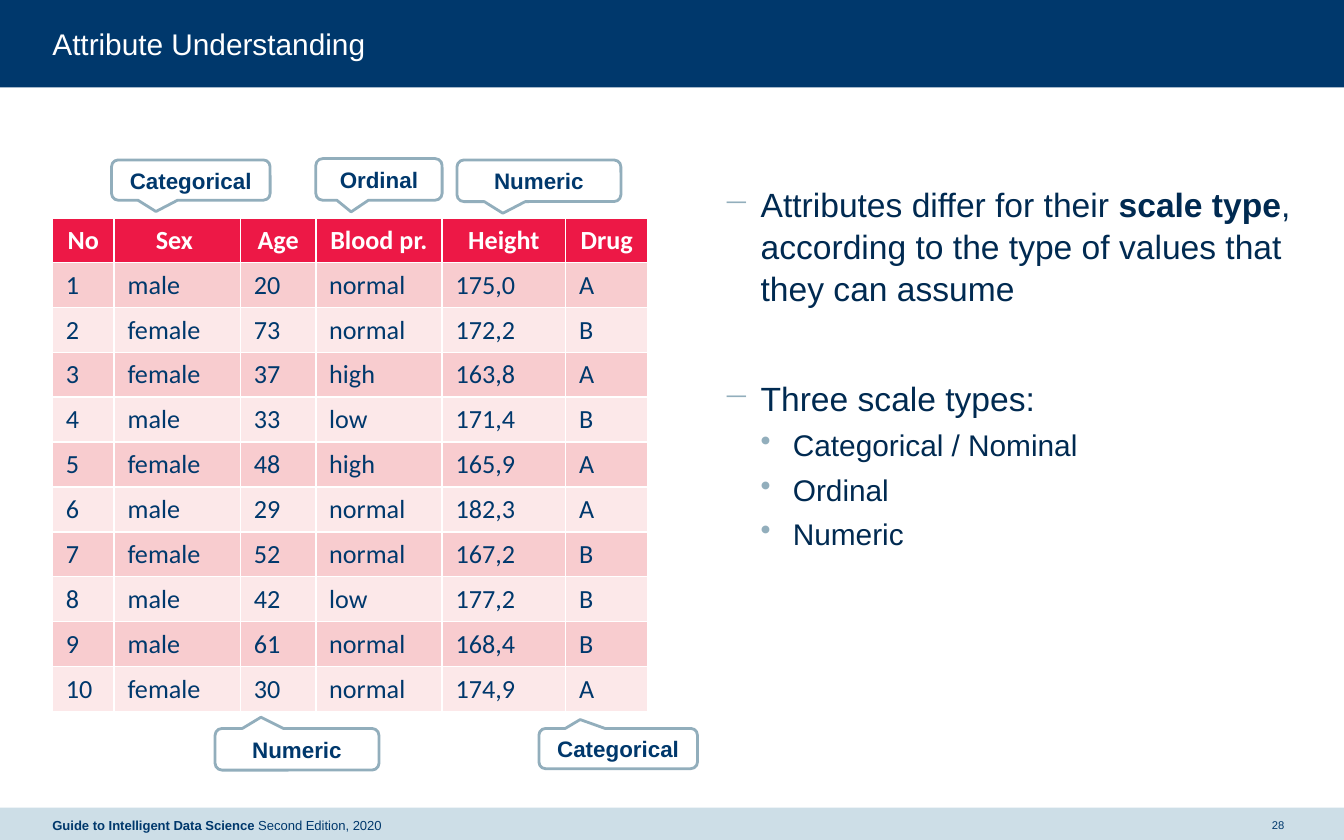
from lxml.etree import SubElement
from pptx import Presentation
from pptx.dml.color import RGBColor
from pptx.enum.shapes import MSO_SHAPE
from pptx.enum.text import MSO_ANCHOR, MSO_AUTO_SIZE, PP_ALIGN
from pptx.oxml.ns import qn
from pptx.util import Inches, Pt

NAVY = RGBColor(0x00, 0x38, 0x6C)
INK = RGBColor(0x00, 0x2A, 0x51)
STEEL = RGBColor(0x92, 0xAE, 0xBC)
PALE_BLUE = RGBColor(0xCD, 0xDE, 0xE7)
RED = RGBColor(0xED, 0x18, 0x46)
PINK = RGBColor(0xF8, 0xCC, 0xCF)
PALE_PINK = RGBColor(0xFC, 0xE8, 0xE9)
WHITE = RGBColor(0xFF, 0xFF, 0xFF)

COLUMN_WIDTHS = [0.46, 0.94, 0.56, 0.94, 0.92, 0.61]
HEADER_HEIGHT = 0.24
ROW_HEIGHT = 0.26
PATIENTS = [
    ("No", "Sex ", "Age", "Blood pr.", "Height", "Drug"),
    ("1", "male", "20", "normal", "175,0", "A"),
    ("2", "female", "73", "normal", "172,2", "B"),
    ("3", "female", "37", "high", "163,8", "A"),
    ("4", "male", "33", "low", "171,4", "B"),
    ("5", "female", "48", "high", "165,9", "A"),
    ("6", "male", "29", "normal", "182,3", "A"),
    ("7", "female", "52", "normal", "167,2", "B"),
    ("8", "male", "42", "low", "177,2", "B"),
    ("9", "male", "61", "normal", "168,4", "B"),
    ("10", "female", "30", "normal", "174,9", "A"),
]
CALLOUTS = [
    ("Numeric", 3.4, 1.19, 1.22, 0.31, -0.22, 0.78),
    ("Categorical", 0.83, 1.19, 1.18, 0.3, -0.22, 0.78),
    ("Ordinal", 2.35, 1.18, 0.94, 0.31, -0.22, 0.78),
    ("Categorical", 4.01, 5.42, 1.18, 0.3, -0.24, -0.72),
    ("Numeric", 1.6, 5.42, 1.22, 0.31, -0.22, -0.77),
]
POINTS = [
    (0, 7.5, [("Attributes differ for their ", False), ("scale type", True),
              (", according to the type of values that they can assume", False)]),
    (0, 36.5, [("Three scale types:", False)]),
    (1, 3.8, [("Categorical / Nominal", False)]),
    (1, 3.8, [("Ordinal", False)]),
    (1, 3.8, [("Numeric", False)]),
]
LEVELS = [("−", 0.29, -0.28, 18), ("•", 0.53, -0.24, 16)]


def add_run(paragraph, text, size, color, bold=False, font="Arial"):
    run = paragraph.add_run()
    run.text = text
    run.font.name = font
    run.font.size = Pt(size)
    run.font.bold = bold
    run.font.color.rgb = color


def clear_margins(frame):
    frame.margin_left = frame.margin_right = 0
    frame.margin_top = frame.margin_bottom = 0
    frame.word_wrap = True


def add_band(slide, top, height, color):
    band = slide.shapes.add_shape(
        MSO_SHAPE.RECTANGLE, 0, Inches(top), Inches(10), Inches(height))
    band.shadow.inherit = False
    band.fill.solid()
    band.fill.fore_color.rgb = color
    band.line.fill.background()
    return band


def set_title(slide, text, band):
    title = slide.shapes.title
    title.left, title.top = Inches(0.39), Inches(0.19)
    title.width, title.height = Inches(9.22), Inches(0.27)
    clear_margins(title.text_frame)
    title.text_frame.auto_size = MSO_AUTO_SIZE.SHAPE_TO_FIT_TEXT
    paragraph = title.text_frame.paragraphs[0]
    paragraph.alignment = PP_ALIGN.LEFT
    add_run(paragraph, text, 16, WHITE)
    band.element.addnext(title.element)


def add_text_box(slide, left, top, width, height, anchor):
    box = slide.shapes.add_textbox(
        Inches(left), Inches(top), Inches(width), Inches(height))
    clear_margins(box.text_frame)
    box.text_frame.vertical_anchor = anchor
    return box.text_frame


def set_bullet(paragraph, character, indent, hanging):
    properties = paragraph._p.get_or_add_pPr()
    properties.set("marL", str(Inches(indent)))
    properties.set("indent", str(Inches(hanging)))
    color = SubElement(properties, qn("a:buClr"))
    SubElement(color, qn("a:srgbClr")).set("val", str(STEEL))
    SubElement(properties, qn("a:buChar")).set("char", character)


def add_points(slide):
    frame = add_text_box(slide, 5.37, 1.36, 4.24, 2.84, MSO_ANCHOR.TOP)
    for index, (level, space, runs) in enumerate(POINTS):
        paragraph = frame.add_paragraph() if index else frame.paragraphs[0]
        character, indent, hanging, size = LEVELS[level]
        paragraph.level = level
        paragraph.line_spacing = 1.04
        paragraph.space_before = Pt(space)
        set_bullet(paragraph, character, indent, hanging)
        for text, bold in runs:
            add_run(paragraph, text, size, INK, bold)


def add_patient_table(slide):
    table_shape = slide.shapes.add_table(
        len(PATIENTS), len(COLUMN_WIDTHS),
        Inches(0.39), Inches(1.62), Inches(4.42), Inches(3.67))
    table = table_shape.table
    for column, width in zip(table.columns, COLUMN_WIDTHS):
        column.width = Inches(width)
    for row_index, values in enumerate(PATIENTS):
        header = row_index == 0
        table.rows[row_index].height = Inches(HEADER_HEIGHT if header else ROW_HEIGHT)
        fill = RED if header else (PALE_PINK, PINK)[row_index % 2]
        for column_index, value in enumerate(values):
            cell = table.cell(row_index, column_index)
            cell.fill.solid()
            cell.fill.fore_color.rgb = fill
            paragraph = cell.text_frame.paragraphs[0]
            paragraph.alignment = PP_ALIGN.CENTER if header else PP_ALIGN.LEFT
            add_run(paragraph, value, 14, WHITE if header else NAVY, header, "Calibri")
    table_shape.height = Inches(3.67)


def add_callout(slide, text, left, top, width, height, tip_x, tip_y):
    callout = slide.shapes.add_shape(
        MSO_SHAPE.ROUNDED_RECTANGULAR_CALLOUT,
        Inches(left), Inches(top), Inches(width), Inches(height))
    callout.adjustments[0] = tip_x
    callout.adjustments[1] = tip_y
    callout.shadow.inherit = False
    callout.fill.background()
    callout.line.color.rgb = STEEL
    callout.line.width = Pt(1.5)
    callout.text_frame.vertical_anchor = MSO_ANCHOR.MIDDLE
    paragraph = callout.text_frame.paragraphs[0]
    paragraph.alignment = PP_ALIGN.CENTER
    add_run(paragraph, text, 12, NAVY, True)


def add_footer(slide):
    source = add_text_box(slide, 0.39, 6.01, 4.39, 0.26, MSO_ANCHOR.MIDDLE).paragraphs[0]
    add_run(source, "Guide to Intelligent Data Science ", 7, NAVY, True)
    add_run(source, "Second Edition, 2020", 7, NAVY)
    number = add_text_box(slide, 9.41, 6.01, 0.2, 0.26, MSO_ANCHOR.MIDDLE).paragraphs[0]
    number.alignment = PP_ALIGN.CENTER
    add_run(number, "28", 6, NAVY)


def main():
    presentation = Presentation()
    presentation.slide_width = Inches(10)
    presentation.slide_height = Inches(6.25)
    slide = presentation.slides.add_slide(presentation.slide_layouts[5])
    header_band = add_band(slide, 0, 0.65, NAVY)
    add_band(slide, 6.01, 0.26, PALE_BLUE)
    set_title(slide, "Attribute Understanding", header_band)
    add_points(slide)
    add_patient_table(slide)
    for callout in CALLOUTS:
        add_callout(slide, *callout)
    add_footer(slide)
    presentation.save("out.pptx")


if __name__ == "__main__":
    main()
